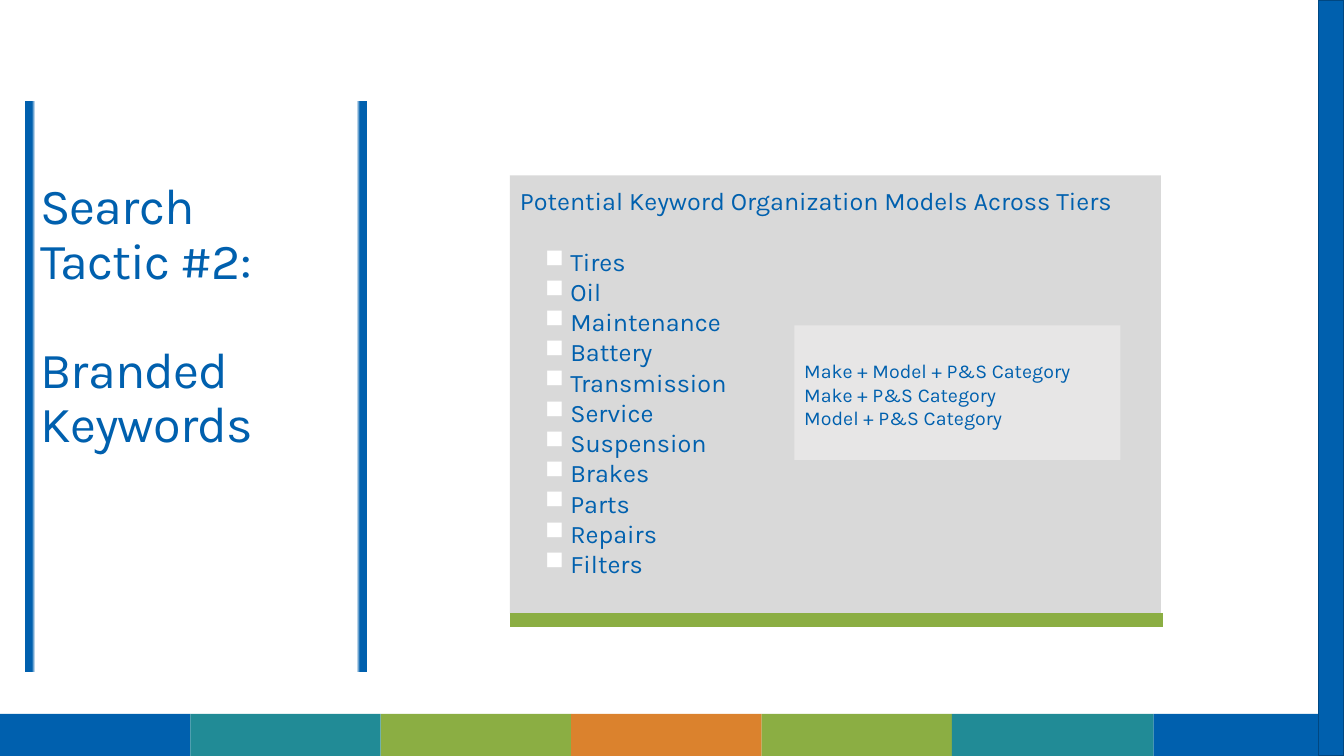
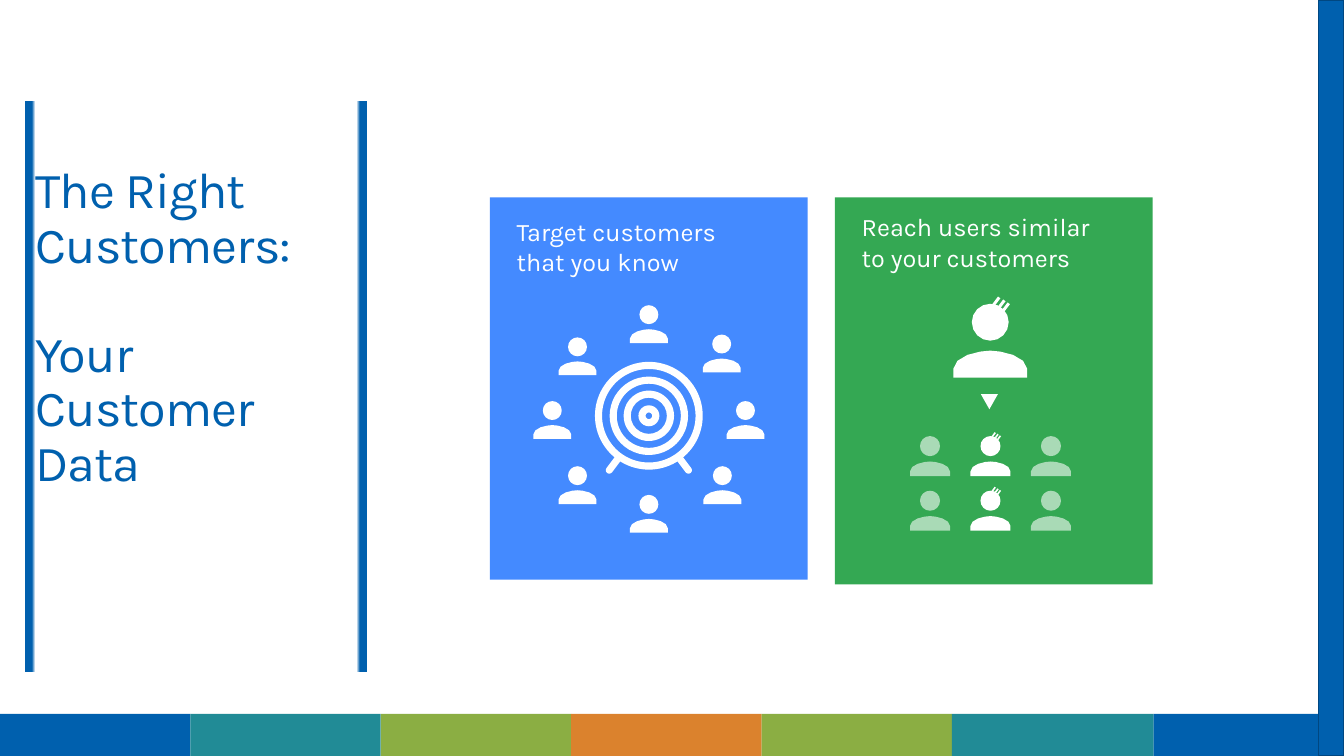
"""Build two slides on search keywords and customer audiences."""
import math

from lxml import etree
from pptx import Presentation
from pptx.dml import color as dml
from pptx.enum import shapes, text
from pptx.oxml import ns
from pptx.util import Pt

BLUE, TEAL, GREEN, ORANGE, WHITE = "0060AE", "218B96", "8BAE43", "DB822D", "FFFFFF"
KINDS = shapes.MSO_SHAPE
rgb = dml.RGBColor.from_string


def block(target, kind, left, top, width, height, fill, angle=0):
    """Add a plain filled shape."""
    box = target.add_shape(kind, Pt(left), Pt(top), Pt(width), Pt(height))
    box.shadow.inherit = False
    box.fill.solid()
    box.fill.fore_color.rgb = rgb(fill)
    box.line.fill.background()
    box.rotation = angle
    return box


def write(box, lines, size, color, side=7.2, top=7.2, gap=0):
    """Fill a box with left-aligned paragraphs, with a gap after the first."""
    frame = box.text_frame
    frame.word_wrap = True
    frame.auto_size = text.MSO_AUTO_SIZE.NONE
    frame.vertical_anchor = text.MSO_ANCHOR.TOP
    frame.margin_left = frame.margin_right = Pt(side)
    frame.margin_top, frame.margin_bottom = Pt(top), Pt(7.2)
    for index, line in enumerate(lines):
        para = frame.add_paragraph() if index else frame.paragraphs[0]
        para.text = line
        para.alignment = text.PP_ALIGN.LEFT
        para.space_before = Pt(gap if index == 1 else 0)
        para.font.name = "Karla"
        para.font.size = Pt(size)
        para.font.color.rgb = rgb(color)
    return frame.paragraphs


deck = Presentation()
deck.slide_width, deck.slide_height = Pt(960), Pt(540)
layout = deck.slide_layouts[5]
for holder in list(layout.placeholders)[1:]:
    holder.element.getparent().remove(holder.element)
keyword_page, customer_page = [deck.slides.add_slide(layout) for _ in range(2)]

edges = [0, 136, 272, 408, 544, 680, 824, 960]
band_colors = [BLUE, TEAL, GREEN, ORANGE, GREEN, TEAL, BLUE]
bands = [
    block(keyword_page.shapes, KINDS.RECTANGLE, left, 510, right - left, 30, fill)
    for left, right, fill in zip(edges, edges[1:], band_colors)
]
side_bar = block(keyword_page.shapes, KINDS.RECTANGLE, 942, 0, 18, 540, BLUE)
side_bar.line.color.rgb = rgb("004781")
side_bar.line.width = Pt(0.85)
for band in bands + [side_bar]:
    layout.shapes.element.append(band.element)

titles = [
    (keyword_page, ["Search\nTactic #2:", "Branded Keywords"], 10.8, 57.6),
    (customer_page, ["The Right Customers:", "Your Customer Data"], 7.2, 46),
]
title_stops = [(0, BLUE), (2, BLUE), (3, WHITE), (97, WHITE), (98, BLUE), (100, BLUE)]
for page, lines, side, top in titles:
    title = page.shapes.title
    title.left, title.top, title.width, title.height = Pt(18), Pt(72), Pt(244), Pt(408)
    for para in write(title, lines, 36, BLUE, side, top, 39):
        para.line_spacing = 0.9
    for font in title.element.iter(ns.qn("a:defRPr")):
        font.set("spc", "-60")
    title.fill.gradient()
    title.fill.gradient_angle = 0
    stop_list = next(title.element.iter(ns.qn("a:gsLst")))
    for stop in list(stop_list):
        stop_list.remove(stop)
    for percent, fill in title_stops:
        stop = etree.SubElement(stop_list, ns.qn("a:gs"), pos=str(percent * 1000))
        etree.SubElement(stop, ns.qn("a:srgbClr"), val=fill)

panel = block(keyword_page.shapes, KINDS.RECTANGLE, 364.3, 125.3, 465, 312.5, "D9D9D9")
panel_lines = [
    "Potential Keyword Organization Models Across Tiers",
    "Tires", "Oil", "Maintenance", "Battery", "Transmission", "Service",
    "Suspension", "Brakes", "Parts", "Repairs", "Filters",
]
for para in write(panel, panel_lines, 18, BLUE, gap=21.6)[1:]:
    properties = para.font._element.getparent()
    properties.set("marL", str(Pt(36)))
    properties.set("indent", str(Pt(-18)))
    bullet_color = etree.Element(ns.qn("a:buClr"))
    etree.SubElement(bullet_color, ns.qn("a:srgbClr"), val=WHITE)
    bullet = etree.Element(ns.qn("a:buChar"), char="■")
    for part in (bullet_color, bullet):
        para.font._element.addprevious(part)

models = block(keyword_page.shapes, KINDS.RECTANGLE, 567.4, 232.4, 233, 96, "E7E6E6")
model_lines = ["Make + Model + P&S Category", "Make + P&S Category", "Model + P&S Category"]
write(models, model_lines, 14, BLUE, top=24)

rule = keyword_page.shapes.add_connector(
    shapes.MSO_CONNECTOR.STRAIGHT, Pt(364.3), Pt(443), Pt(830.7), Pt(443)
)
rule.line.color.rgb = rgb(GREEN)
rule.line.width = Pt(10)
etree.SubElement(rule.element.spPr, ns.qn("a:effectLst"))

known_card, similar_card = [customer_page.shapes.add_group_shape().shapes for _ in range(2)]
cards = [
    (known_card, 350, 273, "448AFF", "Target customers that you know", 362, 147, 181),
    (similar_card, 596.3, 276.5, "34A853", "Reach users similar to your customers", 608.4, 144, 184),
]
for card, left, height, fill, caption, text_left, text_top, text_width in cards:
    block(card, KINDS.RECTANGLE, left, 141, 227, height, fill)
    caption_box = card.add_textbox(Pt(text_left), Pt(text_top), Pt(text_width), Pt(72))
    write(caption_box, [caption], 18, WHITE)

center_x, center_y = 463.5, 297
for diameter in (77, 56, 36, 15):
    corner = (center_x - diameter / 2, center_y - diameter / 2)
    ring = block(known_card, KINDS.DONUT, *corner, diameter, diameter, WHITE)
    ring.adjustments[0] = 5.1 / diameter
for direction in (-1, 1):
    leg_left = center_x + direction * 25 - 2.5
    leg = block(known_card, KINDS.ROUNDED_RECTANGLE, leg_left, 323.5, 5, 16, WHITE, -37 * direction)
    leg.adjustments[0] = 0.5

circle_spots = [
    (399, 241), (450, 218), (502, 239), (381, 286.5),
    (519, 286.5), (502.5, 333), (399, 333), (450, 353.5),
]
people = [(known_card, left, top, 27, 100, False) for left, top in circle_spots]
people.append((similar_card, 681, 217, 52.7, 100, True))
for row in range(2):
    for column in range(3):
        match = column == 1
        opacity = 100 if match else 58
        spot = (650 + 43.2 * column, 311.5 + 39 * row)
        people.append((similar_card, *spot, 28.6, opacity, match))

head = [
    (500 + 250 * math.sin(turn * math.pi / 8), 250 - 250 * math.cos(turn * math.pi / 8))
    for turn in range(16)
]
shoulder = [(500, 635), (365, 648), (190, 693), (55, 773), (0, 880), (0, 1000)]
torso = shoulder + [(1000 - x, y) for x, y in reversed(shoulder[1:])]
hairs = [
    [(605, -98), (637, -74), (553, 38), (521, 14)],
    [(675, -58), (707, -34), (623, 78), (591, 54)],
    [(735, -18), (767, 6), (683, 118), (651, 94)],
]
for card, left, top, size, opacity, haired in people:
    figures = [[head, torso], hairs] if haired else [[head, torso]]
    for outlines in figures:
        builder = card.build_freeform(*outlines[0][0], scale=Pt(size) / 1000)
        for outline in outlines:
            if outline is not outlines[0]:
                builder.move_to(*outline[0])
            builder.add_line_segments(outline[1:], close=True)
        figure = builder.convert_to_shape(Pt(left), Pt(top))
        figure.shadow.inherit = False
        figure.fill.solid()
        figure.fill.fore_color.rgb = rgb(WHITE)
        figure.line.fill.background()
        if opacity < 100:
            tint = next(figure.element.spPr.iter(ns.qn("a:srgbClr")))
            etree.SubElement(tint, ns.qn("a:alpha"), val=str(opacity * 1000))
block(similar_card, KINDS.ISOSCELES_TRIANGLE, 700.6, 281.5, 12.2, 10.8, WHITE, 180)

deck.save("out.pptx")
